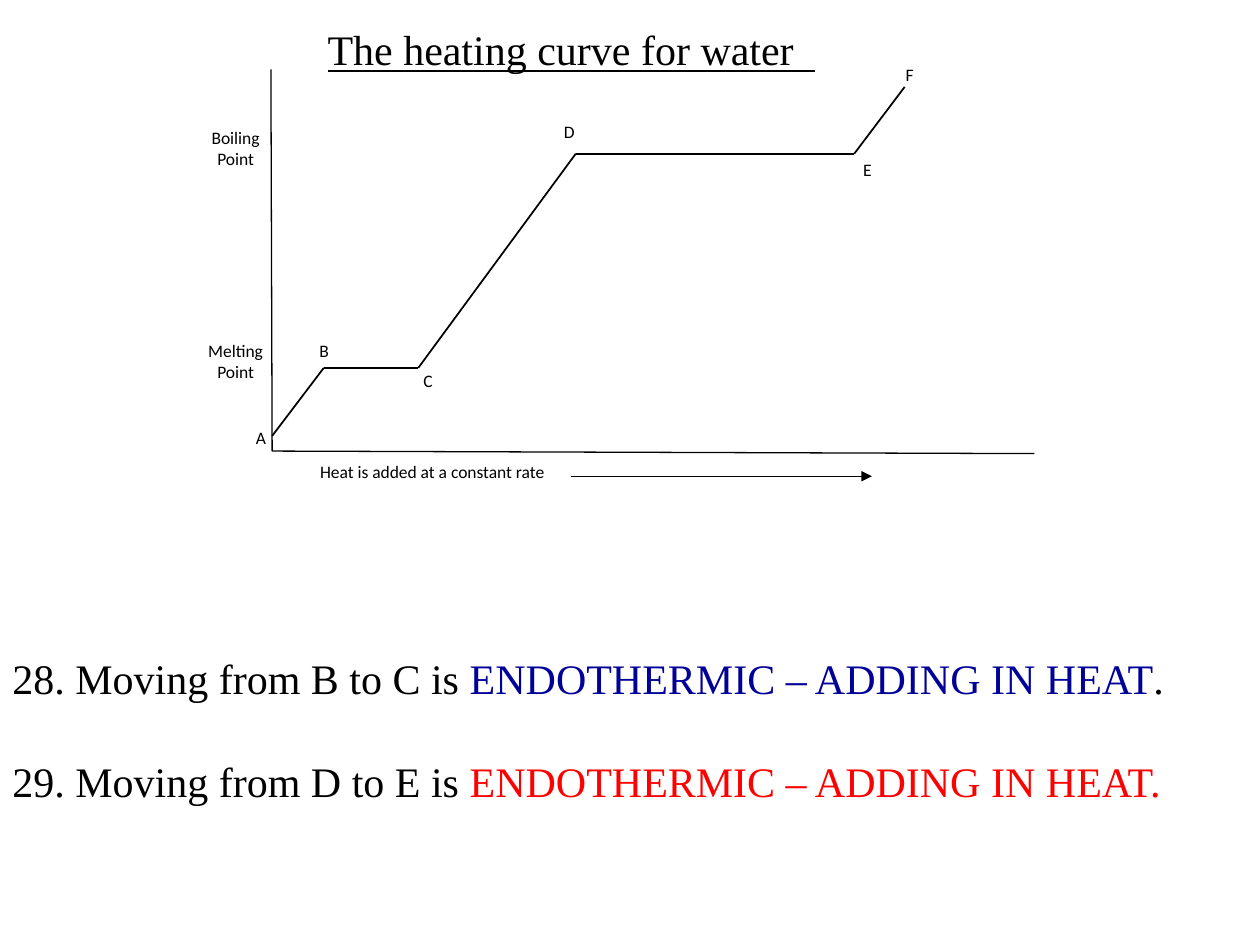
from dataclasses import dataclass

from lxml.etree import SubElement
from pptx import Presentation
from pptx.dml.color import RGBColor as Rgb
from pptx.enum.shapes import MSO_CONNECTOR as Conn
from pptx.enum.text import PP_ALIGN as Align
from pptx.oxml.ns import qn
from pptx.util import Inches, Pt


@dataclass(frozen=True)
class Theme:
    ink: str = "000000"
    blue: str = "000099"
    red: str = "FF0000"
    serif: str = "Times New Roman"
    sans: str = "Calibri"
    big: int = 24
    small: int = 10


class Board:
    def __init__(self, slide, theme):
        self.slide = slide
        self.theme = theme

    def line(self, start, end, width=1, arrow=False):
        ends = [Inches(v) for v in (*start, *end)]
        line = self.slide.shapes.add_connector(Conn.STRAIGHT, *ends)
        line.line.width = Pt(width)
        line.line.color.rgb = Rgb.from_string(self.theme.ink)
        if arrow:
            SubElement(line.line._get_or_add_ln(), qn("a:tailEnd"), type="triangle")
        SubElement(line._element.spPr, qn("a:effectLst"))

    def box(self, left, top, width, height, pad=0.04):
        shape = self.slide.shapes.add_textbox(
            Inches(left), Inches(top), Inches(width), Inches(height))
        frame = shape.text_frame
        frame.word_wrap = True
        frame.margin_left = frame.margin_right = Inches(pad)
        frame.margin_top = frame.margin_bottom = Inches(pad)
        return frame

    def run(self, para, text, size, face, color=None, under=None):
        run = para.add_run()
        run.text = text
        run.font.size = Pt(size)
        run.font.name = face
        run.font.underline = under
        run.font.color.rgb = Rgb.from_string(color or self.theme.ink)

    def label(self, text, area, align=Align.LEFT):
        para = self.box(*area).paragraphs[0]
        para.alignment = align
        for i, part in enumerate(text.split("\n")):
            if i:
                para.add_line_break()
            self.run(para, part, self.theme.small, self.theme.sans)

    def title(self, text, area):
        para = self.box(*area).paragraphs[0]
        self.run(para, text, self.theme.big, self.theme.serif, under=True)

    def notes(self, rows, area, top, gap):
        frame = self.box(*area, pad=0.1)
        frame.margin_top = Inches(top)
        for i, row in enumerate(rows):
            para = frame.add_paragraph() if i else frame.paragraphs[0]
            para.space_before = Pt(gap if i else 0)
            for text, color in row:
                self.run(para, text, self.theme.big, self.theme.serif, color)


def main():
    deck = Presentation()
    deck.slide_width, deck.slide_height = Inches(10), Inches(7.5)
    theme = Theme()
    board = Board(deck.slides.add_slide(deck.slide_layouts[6]), theme)

    # Axes
    origin = (2.16, 3.58)
    for end in ((2.15, 0.55), (8.21, 3.6)):
        board.line(end, origin, 0.75)

    # Heating curve, A to F
    curve = [(2.16, 3.46), (2.57, 2.92), (3.32, 2.92),
             (4.57, 1.22), (6.78, 1.22), (7.18, 0.69)]
    for start, end in zip(curve, curve[1:]):
        board.line(start, end)

    # Temperature and point labels
    for text, top in (("Melting\nPoint", 2.66), ("Boiling\nPoint", 0.97)):
        board.label(text, (1.59, top, 0.56, 0.6), Align.CENTER)
    marks = [("A", 1.91, 3.35, Align.RIGHT), ("B", 2.41, 2.66, Align.RIGHT),
             ("C", 3.32, 2.9, Align.LEFT), ("D", 4.36, 0.92, Align.RIGHT),
             ("E", 6.81, 1.22, Align.LEFT), ("F", 7.05, 0.47, Align.RIGHT)]
    for name, left, top, align in marks:
        board.label(name, (left, top, 0.24, 0.24), align)

    # Heat arrow, title and caption
    board.line((4.53, 3.78), (6.92, 3.78), 0.5, arrow=True)
    board.title("The heating curve for water  ", (2.56, 0.15, 4.04, 0.71))
    board.label("Heat is added at a constant rate", (2.5, 3.62, 5.55, 0.54))

    # Answers
    heat = "ENDOTHERMIC – ADDING IN HEAT"
    rows = [
        [("28. Moving from B to C is ", theme.ink), (heat, theme.blue), (".", theme.ink)],
        [("29. Moving from D to E is ", theme.ink), (heat + ".", theme.red)],
    ]
    board.notes(rows, (0, 4.3, 10, 2.42), top=0.88, gap=30)

    deck.save("out.pptx")


if __name__ == "__main__":
    main()
